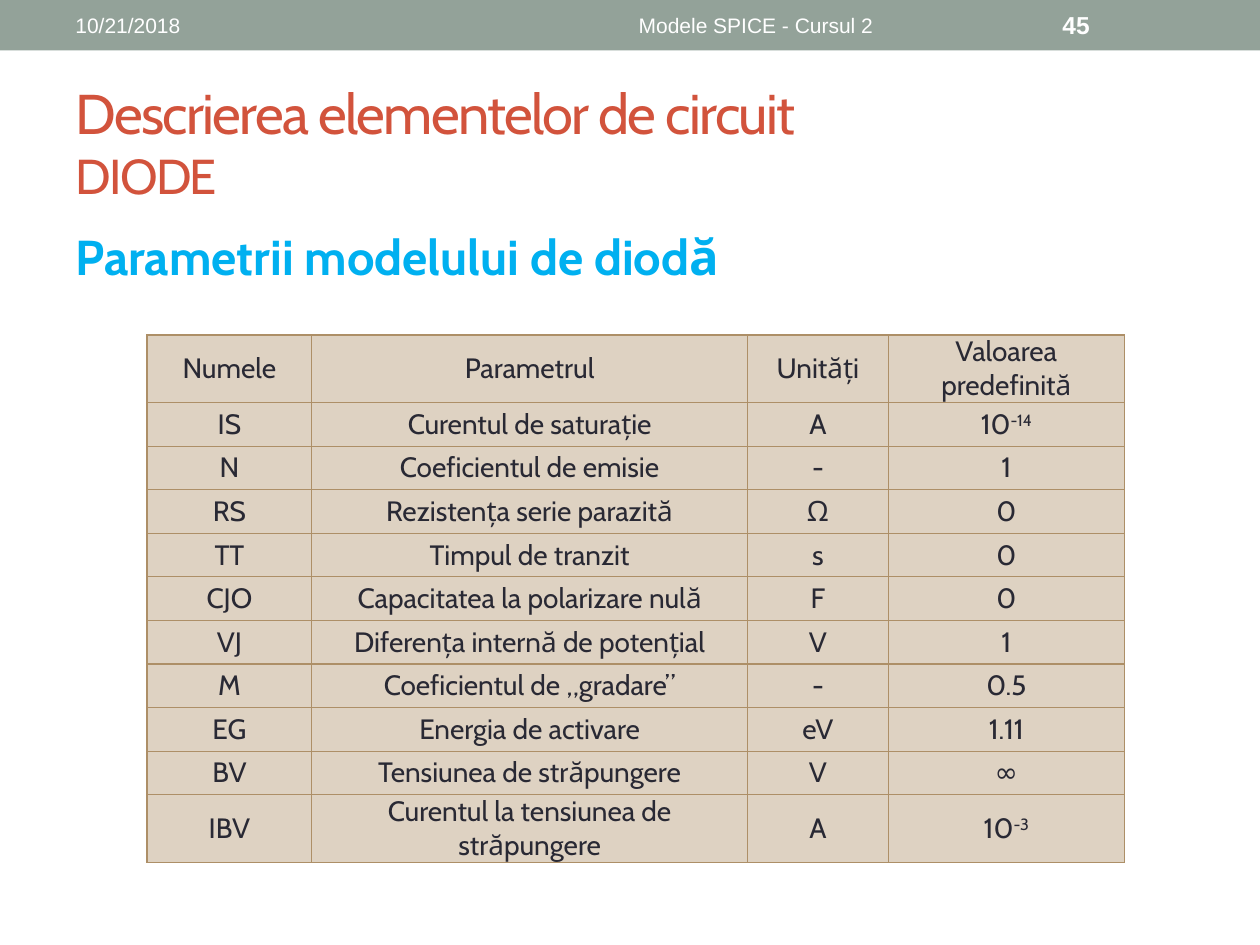
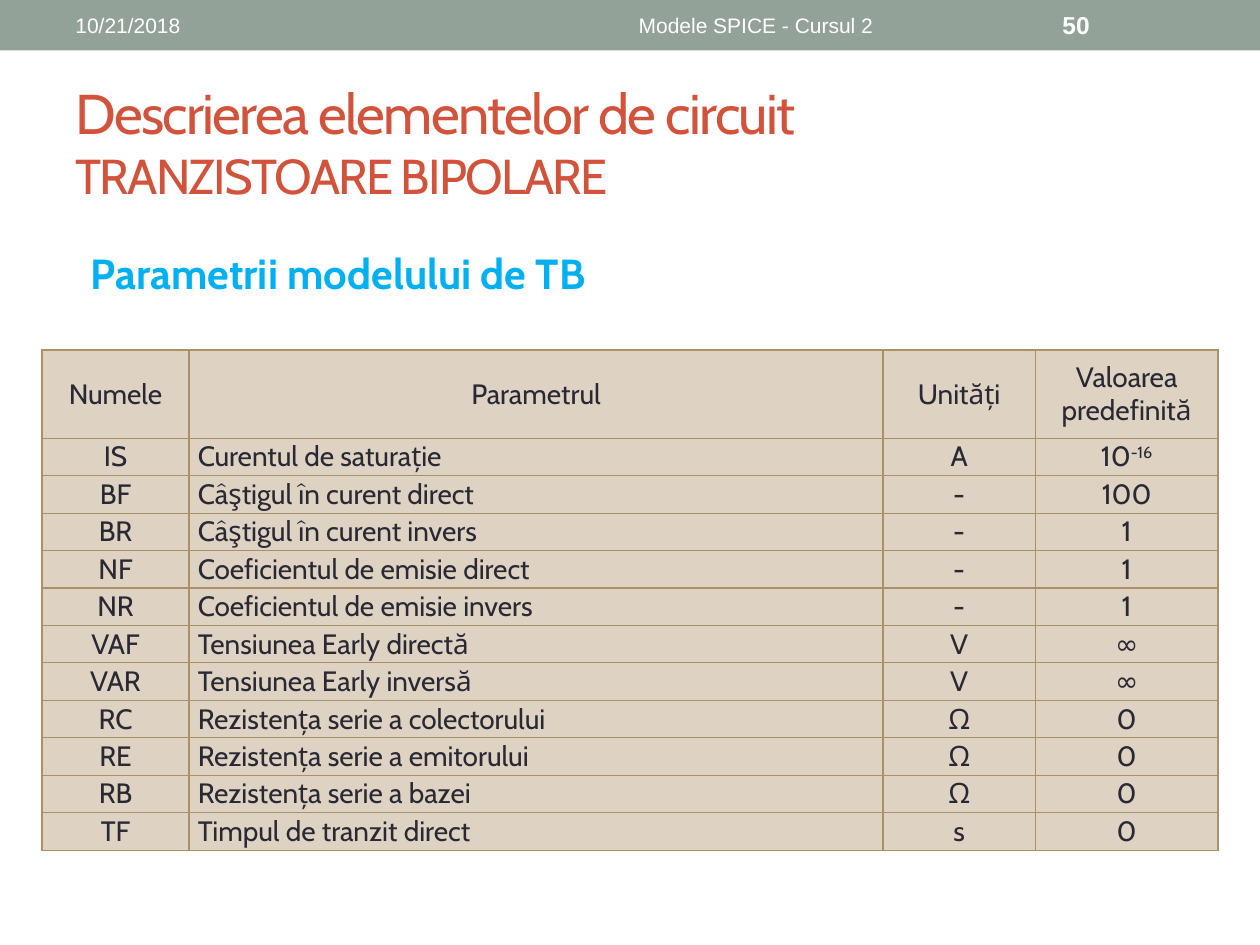
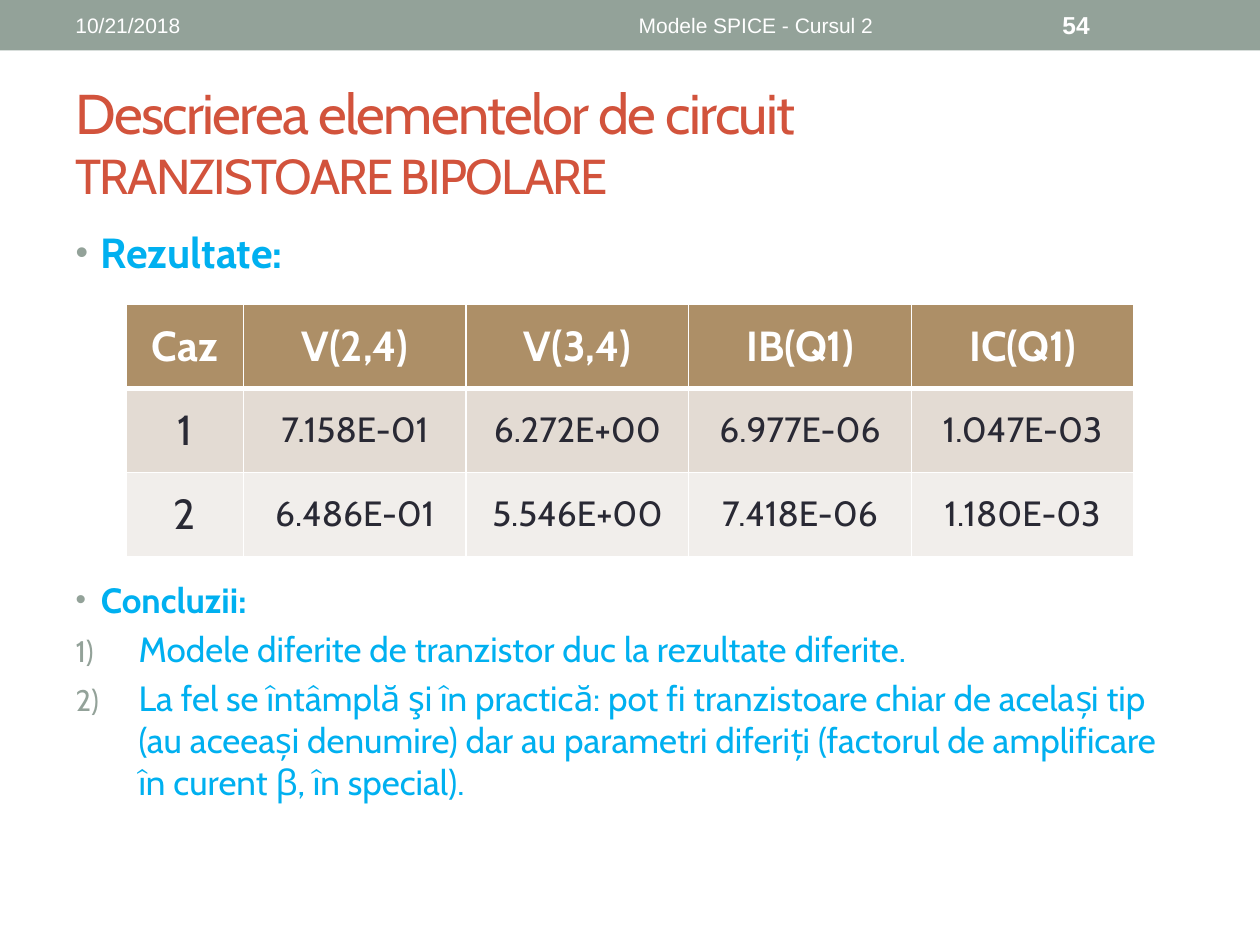
from lxml.etree import SubElement
from pptx import Presentation
from pptx.dml.color import RGBColor
from pptx.enum.shapes import MSO_SHAPE
from pptx.enum.text import MSO_ANCHOR, MSO_AUTO_SIZE, PP_ALIGN
from pptx.oxml.ns import qn
from pptx.util import Inches, Pt

COLORS = {
    "band": "93A299", "title": "D2533C", "accent": "00B0F0", "ink": "292934",
    "white": "FFFFFF", "tan": "AD8F67", "sand": "DED2C2",
    "odd": "E3DBD3", "even": "F1EEEB",
}
HEADER = ["Numele", "Parametrul", "Unități", "Valoarea predefinită"]
DIODE_ROWS = [
    HEADER,
    ["IS", "Curentul de saturație", "A", "10^-14"],
    ["N", "Coeficientul de emisie", "-", "1"],
    ["RS", "Rezistența serie parazită", "Ω", "0"],
    ["TT", "Timpul de tranzit", "s", "0"],
    ["CJO", "Capacitatea la polarizare nulă", "F", "0"],
    ["VJ", "Diferența internă de potențial", "V", "1"],
    ["M", "Coeficientul de „gradare”", "-", "0.5"],
    ["EG", "Energia de activare", "eV", "1.11"],
    ["BV", "Tensiunea de străpungere", "V", "∞"],
    ["IBV", "Curentul la tensiunea de străpungere", "A", "10^-3"],
]
TRANSISTOR_ROWS = [
    HEADER,
    ["IS", "Curentul de saturație", "A", "10^-16"],
    ["BF", "Câştigul în curent direct", "-", "100"],
    ["BR", "Câştigul în curent invers", "-", "1"],
    ["NF", "Coeficientul de emisie direct", "-", "1"],
    ["NR", "Coeficientul de emisie invers", "-", "1"],
    ["VAF", "Tensiunea Early directă", "V", "∞"],
    ["VAR", "Tensiunea Early inversă", "V", "∞"],
    ["RC", "Rezistența serie a colectorului", "Ω", "0"],
    ["RE", "Rezistența serie a emitorului", "Ω", "0"],
    ["RB", "Rezistența serie a bazei", "Ω", "0"],
    ["TF", "Timpul de tranzit direct", "s", "0"],
]
RESULT_ROWS = [
    ["Caz", "V(2,4)", "V(3,4)", "IB(Q1)", "IC(Q1)"],
    ["1", "7.158E-01", "6.272E+00", "6.977E-06", "1.047E-03"],
    ["2", "6.486E-01", "5.546E+00", "7.418E-06", "1.180E-03"],
]


def color(name):
    return RGBColor.from_string(COLORS[name])


def parameter_look(row, column):
    return dict(fill="sand", ink="ink", size=16, bold=False)


def result_look(row, column):
    if row == 0:
        return dict(fill="tan", ink="white", size=24, bold=True)
    return dict(fill="odd" if row % 2 else "even", ink="ink",
                size=20 if column else 24, bold=False)


class Lecture:
    """Builds lecture pages on a grid of 120 columns by 90 rows."""

    def __init__(self):
        self.deck = Presentation()
        self.deck.slide_width, self.deck.slide_height = Inches(10), Inches(7.5)
        self.column = self.deck.slide_width / 120
        self.row = self.deck.slide_height / 90
        self.page = None

    def frame(self, left, top, width, height):
        return (round(left * self.column), round(top * self.row),
                round(width * self.column), round(height * self.row))

    def place(self, shape, frame, anchor):
        shape.left, shape.top, shape.width, shape.height = self.frame(*frame)
        box = shape.text_frame
        box.word_wrap, box.auto_size = True, MSO_AUTO_SIZE.NONE
        box.vertical_anchor = anchor
        return box

    def style(self, para, size, ink, bold=False, face="Cabin", align=PP_ALIGN.LEFT):
        para.alignment = align
        para.font.name, para.font.size, para.font.bold = face, Pt(size), bold
        para.font.color.rgb = color(ink)

    def start(self, number, topic, title_frame=(6, 7, 108, 13)):
        self.page = self.deck.slides.add_slide(self.deck.slide_layouts[1])
        self.band()
        self.label("10/21/2018", 6, 38)
        self.label("Modele SPICE - Cursul 2", 45, 54, align=PP_ALIGN.CENTER)
        self.label(number, 100, 14, size=14, bold=True)
        self.title(topic, title_frame)

    def band(self):
        band = self.page.shapes.add_shape(MSO_SHAPE.RECTANGLE, *self.frame(0, 0, 120, 4.8))
        band.shadow.inherit = False
        band.fill.solid()
        band.fill.fore_color.rgb = color("band")
        band.line.fill.background()

    def label(self, text, left, width, size=12, **font):
        frame = (left, 0.25, width, 4.3)
        shape = self.page.shapes.add_textbox(*self.frame(*frame))
        para = self.place(shape, frame, MSO_ANCHOR.MIDDLE).paragraphs[0]
        para.text = text
        self.style(para, size, "white", face="Arial", **font)

    def title(self, topic, frame):
        box = self.place(self.page.shapes.title, frame, MSO_ANCHOR.MIDDLE)
        para = box.paragraphs[0]
        para.text = f"Descrierea elementelor de circuit\v{topic}"
        self.style(para, 32, "title")
        for span, size in zip(para.runs, (32, 28)):
            span.font.size = Pt(size)
            span._r.get_or_add_rPr().set("spc", "-100")

    def body(self, frame):
        return self.place(self.page.placeholders[1], frame, MSO_ANCHOR.TOP)

    def item(self, para, text, size, bold=True, bullet=None, indent=(0.2, -0.2), before=None):
        para.text = text
        para.space_before = Pt(before or size * 0.2)
        props = para._p.get_or_add_pPr()
        props.set("marL", str(Inches(indent[0])))
        props.set("indent", str(Inches(indent[1])))
        if bullet:
            tint = SubElement(props, qn("a:buClr"))
            SubElement(tint, qn("a:srgbClr"), val=COLORS["band"])
            SubElement(props, qn("a:buSzPct"), val="85000")
        if bullet == "number":
            SubElement(props, qn("a:buFont"), typeface="Cabin")
            SubElement(props, qn("a:buAutoNum"), type="arabicParenR")
        elif bullet:
            SubElement(props, qn("a:buFont"), typeface="Arial")
            SubElement(props, qn("a:buChar"), char=bullet)
        else:
            SubElement(props, qn("a:buNone"))
        self.style(para, size, "accent", bold)

    def table(self, left, top, widths, heights, rows, look, border,
              margin=None, left_column=None, header_rule=None):
        frame = self.frame(left, top, sum(widths), sum(heights))
        table = self.page.shapes.add_table(len(rows), len(widths), *frame).table
        table.first_row = table.horz_banding = False
        for column, width in zip(table.columns, widths):
            column.width = round(width * self.column)
        for line, height in zip(table.rows, heights):
            line.height = round(height * self.row)
        ink, thin = border
        thick = header_rule or thin
        for row, texts in enumerate(rows):
            edges = {"L": thin, "R": thin, "T": thick if row == 1 else thin,
                     "B": thick if row == 0 else thin}
            for column, text in enumerate(texts):
                cell = table.cell(row, column)
                if margin:
                    cell.margin_left = cell.margin_right = Inches(margin)
                    cell.margin_top = cell.margin_bottom = 0
                is_left = row and column == left_column
                align = PP_ALIGN.LEFT if is_left else PP_ALIGN.CENTER
                self.cell(cell, text, align, ink, edges, **look(row, column))

    def cell(self, cell, text, align, border, edges, fill, ink, size, bold):
        cell.vertical_anchor = MSO_ANCHOR.MIDDLE
        props = cell._tc.get_or_add_tcPr()
        for side, width in edges.items():
            line = SubElement(props, qn(f"a:ln{side}"), w=str(Pt(width)))
            paint = SubElement(line, qn("a:solidFill"))
            SubElement(paint, qn("a:srgbClr"), val=COLORS[border])
        cell.fill.solid()
        cell.fill.fore_color.rgb = color(fill)
        para = cell.text_frame.paragraphs[0]
        base, _, power = text.partition("^")
        para.text = base
        if power:
            span = para.add_run()
            span.text = power
            span._r.get_or_add_rPr().set("baseline", "30000")
        self.style(para, size, ink, bold, align=align)


def diode_page(lecture):
    lecture.start("45", "DIODE")
    box = lecture.body((6, 21, 108, 8))
    lecture.item(box.paragraphs[0], "Parametrii modelului de diodă", 28)
    lecture.table(14, 31.9, [15.7, 41.5, 13.4, 22.5], [6.4] + [4.15] * 9 + [6.4],
                  DIODE_ROWS, parameter_look, ("tan", 0.75), margin=0.08)


def transistor_page(lecture):
    lecture.start("50", "TRANZISTOARE BIPOLARE", (6, 6, 108, 15))
    box = lecture.body((6, 23, 108, 5))
    lecture.item(box.paragraphs[0], "Parametrii modelului de TB", 24, indent=(0.4, -0.28))
    lecture.table(4, 33.33, [14, 66.1, 14.5, 17.4], [8.4] + [3.57] * 11,
                  TRANSISTOR_ROWS, parameter_look, ("tan", 0.75),
                  margin=0.07, left_column=1)


def results_page(lecture):
    lecture.start("54", "TRANZISTOARE BIPOLARE")
    box = lecture.body((6, 21, 108, 64))
    lecture.item(box.paragraphs[0], "Rezultate:", 24, bullet="•")
    lecture.item(box.add_paragraph(), "Concluzii:", 20, bullet="•", before=172)
    for conclusion in (
        "Modele diferite de tranzistor duc la rezultate diferite.",
        "La fel se întâmplă şi în practică: pot fi tranzistoare chiar de același tip "
        "(au aceeași denumire) dar au parametri diferiți (factorul de amplificare "
        "în curent β, în special).",
    ):
        lecture.item(box.add_paragraph(), conclusion, 20, bold=False,
                     bullet="number", indent=(0.5, -0.5))
    lecture.table(12, 29, [11.2] + [21.2] * 4, [8] * 3, RESULT_ROWS,
                  result_look, ("white", 1), header_rule=3)


def main():
    lecture = Lecture()
    diode_page(lecture)
    transistor_page(lecture)
    results_page(lecture)
    lecture.deck.save("out.pptx")


if __name__ == "__main__":
    main()
